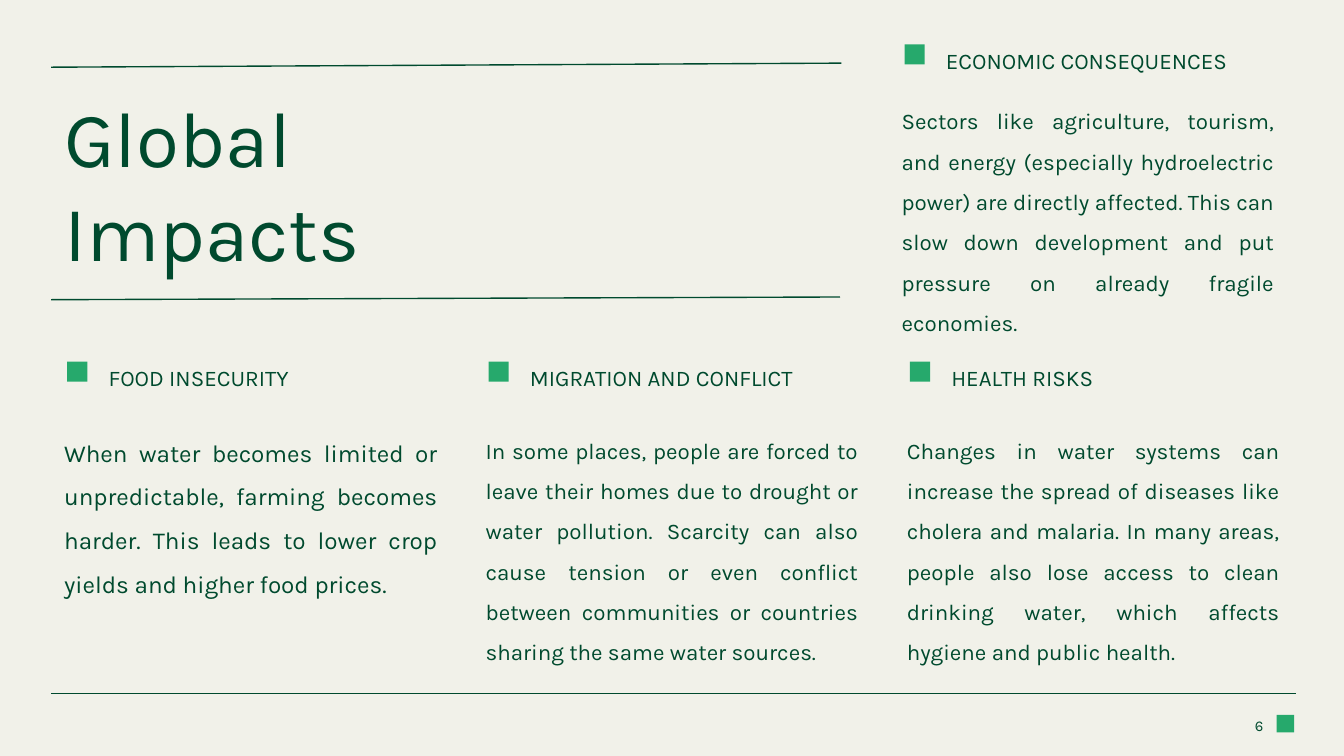
from lxml.etree import SubElement
from pptx import Presentation
from pptx.dml.color import RGBColor
from pptx.enum.shapes import MSO_CONNECTOR as Connector, MSO_SHAPE as Shape
from pptx.enum.text import MSO_ANCHOR as Anchor, PP_ALIGN as Align
from pptx.oxml.ns import qn
from pptx.util import Inches, Pt

BACKGROUND, INK, ACCENT = "F1F1E9", "004A2E", "26A96C"
FONT = "Karla"
WIDTH = 10
HEIGHT = WIDTH * 9 / 16
MARGIN, LAST_COLUMN, COLUMN = 0.38, 6.65, 2.97
PITCH = (LAST_COLUMN - MARGIN) / 2
HEADING_INDENT, MARKER_INDENT, MARKER = 0.33, 0.12, 0.15
ROW, BODY_ROW = 2.59, 3.05

TITLE = "Global\nImpacts"
PAGE = "6"
TOPICS = [
    ("FOOD INSECURITY",
     "When water becomes limited or unpredictable, farming becomes harder. "
     "This leads to lower crop yields and higher food prices.",
     MARGIN, ROW, BODY_ROW, 1.35, 13),
    ("MIGRATION AND CONFLICT",
     "In some places, people are forced to leave their homes due to drought or "
     "water pollution. Scarcity can also cause tension or even conflict between "
     "communities or countries sharing the same water sources.",
     MARGIN + PITCH, ROW, BODY_ROW, 1.9, 12),
    ("HEALTH RISKS",
     "Changes in water systems can increase the spread of diseases like cholera "
     "and malaria. In many areas, people also lose access to clean drinking "
     "water, which affects hygiene and public health.",
     LAST_COLUMN, ROW, BODY_ROW, 1.9, 12),
    ("ECONOMIC CONSEQUENCES",
     "Sectors like agriculture, tourism, and energy (especially hydroelectric "
     "power) are directly affected. This can slow down development and put "
     "pressure on already fragile economies.",
     6.61, 0.23, 0.6, 1.9, 12),
]
RULES = [
    (0.5, 6.26, 0.47),
    (2.23, 6.25, 2.21),
    (5.16, 9.64, 5.16),
]


def color(value):
    return RGBColor.from_string(value)


def add_text(slide, text, left, top, width, height, size=12, align=Align.LEFT,
             anchor=Anchor.TOP, spacing=1.0, after=0):
    box = slide.shapes.add_textbox(*map(Inches, (left, top, width, height)))
    frame = box.text_frame
    frame.word_wrap = True
    frame.vertical_anchor = anchor
    frame.margin_left = frame.margin_right = Inches(0.1)
    frame.margin_top = frame.margin_bottom = Inches(0.1)
    paragraph = frame.paragraphs[0]
    paragraph.text = text
    paragraph.alignment = align
    paragraph.line_spacing = spacing
    paragraph.space_after = Pt(after)
    for run in paragraph.runs:
        run.font.name = FONT
        run.font.size = Pt(size)
        run.font.color.rgb = color(INK)


def add_square(slide, left, top, side):
    shape = slide.shapes.add_shape(Shape.RECTANGLE, *map(Inches, (left, top, side, side)))
    shape.shadow.inherit = False
    shape.fill.solid()
    shape.fill.fore_color.rgb = color(ACCENT)
    shape.line.fill.background()


def add_rule(slide, start_y, end_x, end_y):
    line = slide.shapes.add_connector(
        Connector.STRAIGHT, *map(Inches, (MARGIN, start_y, end_x, end_y)))
    line.line.color.rgb = color(INK)
    line.line.width = Pt(0.75)
    SubElement(line._element.spPr, qn("a:effectLst"))


def add_topic(slide, heading, body, left, top, body_top, body_height, size):
    add_square(slide, left + MARKER_INDENT, top + 0.1, MARKER)
    add_text(slide, heading, left + HEADING_INDENT, top, COLUMN - HEADING_INDENT, 0.28,
             spacing=1.1, after=4)
    add_text(slide, body, left, body_top, COLUMN, body_height, size=size,
             align=Align.JUSTIFY, spacing=1.5)


def main():
    presentation = Presentation()
    presentation.slide_width = Inches(WIDTH)
    presentation.slide_height = Inches(HEIGHT)
    slide = presentation.slides.add_slide(presentation.slide_layouts[6])
    slide.background.fill.solid()
    slide.background.fill.fore_color.rgb = color(BACKGROUND)

    add_text(slide, TITLE, MARGIN, 0.5, 9.25, 1.73, size=42, anchor=Anchor.MIDDLE)
    for topic in TOPICS:
        add_topic(slide, *topic)
    for rule in RULES:
        add_rule(slide, *rule)
    add_text(slide, PAGE, 9, 5.25, 0.5, 0.3, size=8, align=Align.RIGHT, anchor=Anchor.MIDDLE)
    add_square(slide, 9.5, 5.32, 0.13)

    presentation.save("out.pptx")


if __name__ == "__main__":
    main()
